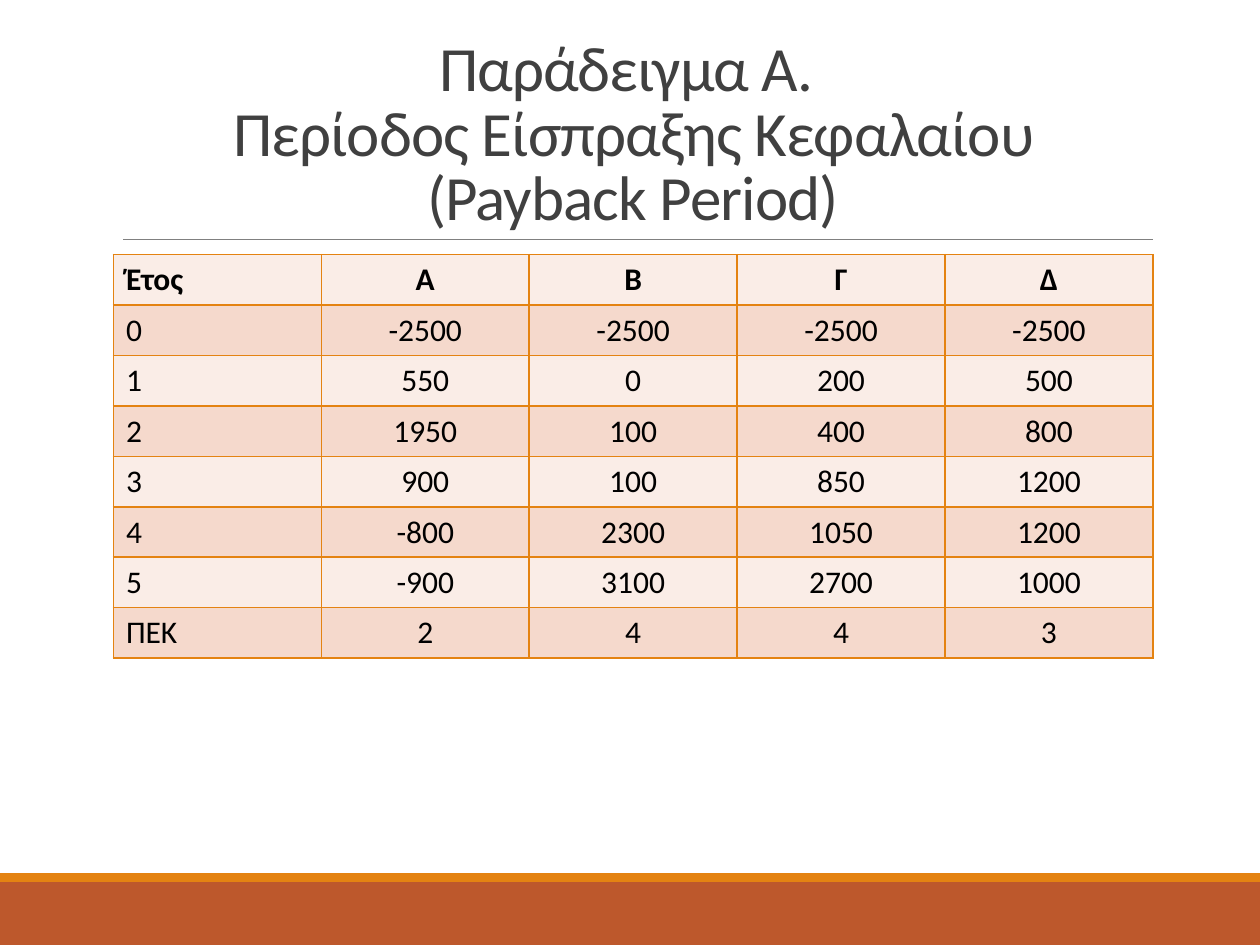
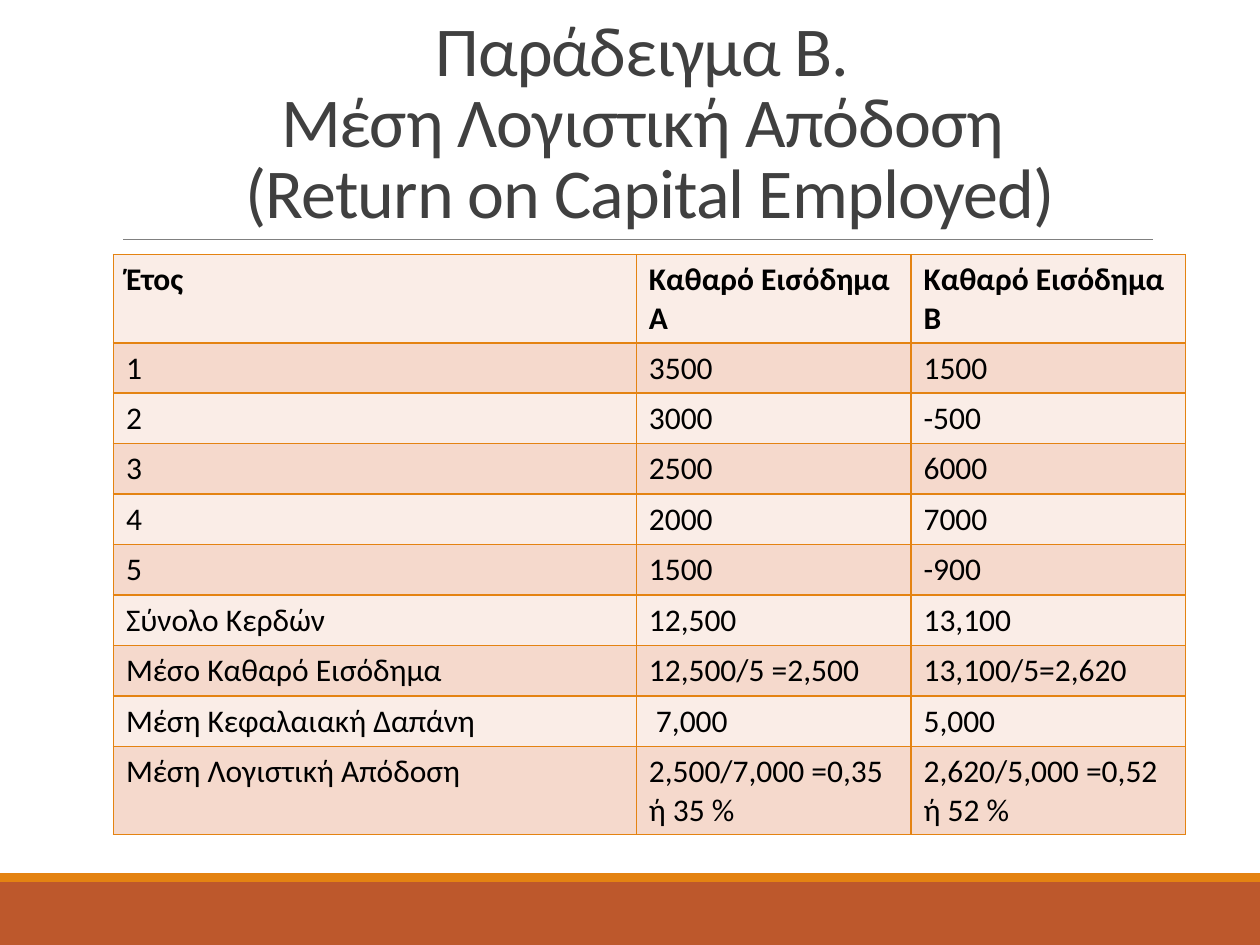
"""Build two slides of worked investment-appraisal examples."""
import dataclasses

import lxml.etree
import pptx
import pptx.dml.color
import pptx.enum.shapes
import pptx.enum.text
import pptx.oxml.ns
import pptx.util

Inches = pptx.util.Inches
Pt = pptx.util.Pt
Color = pptx.dml.color.RGBColor.from_string
Align = pptx.enum.text.PP_ALIGN
qn = pptx.oxml.ns.qn


@dataclasses.dataclass(frozen=True)
class Theme:
    font: str = "Calibri"
    title_color: str = "404040"
    text_color: str = "000000"
    rule_color: str = "808080"
    band_color: str = "BD582C"
    accent_color: str = "E48312"
    row_colors: tuple = ("FAEDE7", "F5D9CC")
    cell_size: int = 18
    left: float = 0.9
    title_bottom: float = 1.9
    table_top: float = 2.02


theme = Theme()


def add_run(paragraph, text, size, color, bold=False):
    run = paragraph.add_run()
    run.text = text
    run.font.name = theme.font
    run.font.size = Pt(size)
    run.font.bold = bold
    run.font.color.rgb = Color(color)
    return run


def add_borders(cell):
    properties = cell._tc.get_or_add_tcPr()
    for side in ("a:lnL", "a:lnR", "a:lnT", "a:lnB"):
        line = lxml.etree.SubElement(properties, qn(side), w=str(Pt(1)))
        fill = lxml.etree.SubElement(line, qn("a:solidFill"))
        lxml.etree.SubElement(fill, qn("a:srgbClr"), val=theme.accent_color)


examples = [
    {
        "title": ["Παράδειγμα A. ", "Περίοδος Είσπραξης Κεφαλαίου (Payback Period)"],
        "title_size": 36,
        "title_top": 0.31,
        "width": 8.25,
        "columns": [1.65] * 5,
        "row_heights": [0.4] * 8,
        "value_alignment": Align.CENTER,
        "rows": [
            ["Έτος", "Α", "Β", "Γ", "Δ"],
            ["0", "-2500", "-2500", "-2500", "-2500"],
            ["1", "550", "0", "200", "500"],
            ["2", "1950", "100", "400", "800"],
            ["3", "900", "100", "850", "1200"],
            ["4", "-800", "2300", "1050", "1200"],
            ["5", "-900", "3100", "2700", "1000"],
            ["ΠΕΚ", "2", "4", "4", "3"],
        ],
    },
    {
        "title": ["Παράδειγμα B. ", "Μέση Λογιστική Απόδοση ", "(Return on Capital Employed)"],
        "title_size": 40,
        "title_top": 0,
        "width": 8.52,
        "columns": [4.15, 2.18, 2.18],
        "row_heights": [0.7] + [0.4] * 8 + [0.7],
        "value_alignment": Align.LEFT,
        "rows": [
            ["Έτος", "Καθαρό Εισόδημα Α", "Καθαρό Εισόδημα Β"],
            ["1", "3500", "1500"],
            ["2", "3000", "-500"],
            ["3", "2500", "6000"],
            ["4", "2000", "7000"],
            ["5", "1500", "-900"],
            ["Σύνολο Κερδών", "12,500", "13,100"],
            ["Μέσο Καθαρό Εισόδημα", "12,500/5 =2,500", "13,100/5=2,620"],
            ["Μέση Κεφαλαιακή Δαπάνη", " 7,000", "5,000"],
            ["Μέση Λογιστική Απόδοση", "2,500/7,000 =0,35 ή 35 %", "2,620/5,000 =0,52 ή 52 %"],
        ],
    },
]

presentation = pptx.Presentation()
presentation.slide_width = Inches(10)
presentation.slide_height = Inches(7.5)

for example in examples:
    slide = presentation.slides.add_slide(presentation.slide_layouts[6])

    for top, height, color in ((7, 0.5, theme.band_color), (6.93, 0.07, theme.accent_color)):
        band = slide.shapes.add_shape(
            pptx.enum.shapes.MSO_SHAPE.RECTANGLE, 0, Inches(top), Inches(10), Inches(height)
        )
        band.shadow.inherit = False
        band.fill.solid()
        band.fill.fore_color.rgb = Color(color)
        band.line.fill.background()

    rule = slide.shapes.add_connector(
        pptx.enum.shapes.MSO_CONNECTOR.STRAIGHT,
        Inches(0.98), Inches(theme.title_bottom), Inches(9.15), Inches(theme.title_bottom),
    )
    rule.line.color.rgb = Color(theme.rule_color)
    rule.line.width = Pt(0.5)
    lxml.etree.SubElement(rule._element.spPr, qn("a:effectLst"))

    title = slide.shapes.add_textbox(
        Inches(theme.left), Inches(example["title_top"]),
        Inches(example["width"]), Inches(theme.title_bottom - example["title_top"]),
    )
    title.text_frame.word_wrap = True
    title.text_frame.vertical_anchor = pptx.enum.text.MSO_ANCHOR.BOTTOM
    paragraph = title.text_frame.paragraphs[0]
    paragraph.alignment = Align.CENTER
    paragraph.line_spacing = 0.85
    for index, line in enumerate(example["title"]):
        if index:
            paragraph.add_line_break()
        run = add_run(paragraph, line, example["title_size"], theme.title_color)
        run.font._element.set("spc", "-50")

    rows = example["rows"]
    table = slide.shapes.add_table(
        len(rows), len(example["columns"]), Inches(theme.left), Inches(theme.table_top),
        Inches(sum(example["columns"])), Inches(sum(example["row_heights"])),
    ).table
    table.first_row = False
    table.horz_banding = False
    for column, width in zip(table.columns, example["columns"]):
        column.width = Inches(width)
    for row, height in zip(table.rows, example["row_heights"]):
        row.height = Inches(height)

    for row_index, values in enumerate(rows):
        for column_index, value in enumerate(values):
            cell = table.cell(row_index, column_index)
            add_borders(cell)
            cell.fill.solid()
            cell.fill.fore_color.rgb = Color(theme.row_colors[row_index % 2])
            paragraph = cell.text_frame.paragraphs[0]
            paragraph.alignment = example["value_alignment"] if column_index else Align.LEFT
            add_run(paragraph, value, theme.cell_size, theme.text_color, bold=row_index == 0)

presentation.save("out.pptx")
